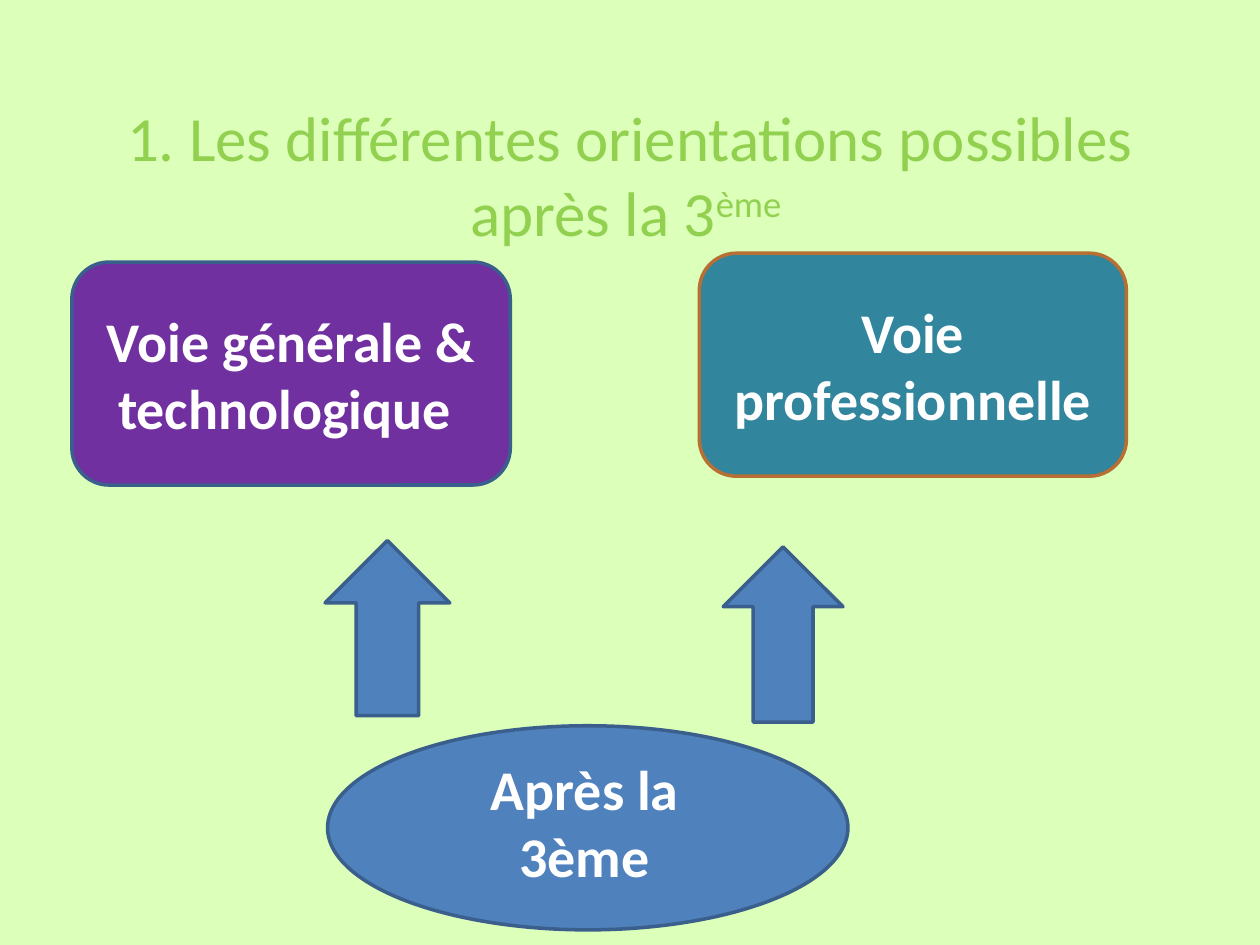
from pptx import Presentation
from pptx.dml.color import RGBColor
from pptx.enum.shapes import MSO_SHAPE
from pptx.enum.text import MSO_ANCHOR, PP_ALIGN
from pptx.util import Inches, Pt

ROUNDED = MSO_SHAPE.ROUNDED_RECTANGLE
UP_ARROW = MSO_SHAPE.UP_ARROW
OVAL = MSO_SHAPE.OVAL
CENTER = PP_ALIGN.CENTER
TOP, MIDDLE = MSO_ANCHOR.TOP, MSO_ANCHOR.MIDDLE

FONT = "Calibri"
BLUE, DARK_BLUE = "4F81BD", "3A5F8C"


def color(hex_value):
    return RGBColor.from_string(hex_value)


def add_run(paragraph, text, size, hex_value, bold=False):
    run = paragraph.add_run()
    run.text = text
    run.font.name = FONT
    run.font.size = Pt(size)
    run.font.bold = bold
    run.font.color.rgb = color(hex_value)
    return run


def set_frame(frame, anchor, left=0.1, top=0.05, right=0.1, bottom=0.05):
    frame.word_wrap = True
    frame.vertical_anchor = anchor
    frame.margin_left, frame.margin_right = Inches(left), Inches(right)
    frame.margin_top, frame.margin_bottom = Inches(top), Inches(bottom)
    paragraph = frame.paragraphs[0]
    paragraph.alignment = CENTER
    return paragraph


def add_title(slide, box):
    title = slide.shapes.add_textbox(*map(Inches, box))
    paragraph = set_frame(title.text_frame, TOP, top=0.45, bottom=0)
    add_run(paragraph, "1. Les différentes orientations possibles après la 3", 36, "92D050")
    ordinal = add_run(paragraph, "ème ", 36, "92D050")
    ordinal.font._element.set("baseline", "30000")


def add_block(slide, kind, box, fill=BLUE, outline=DARK_BLUE):
    block = slide.shapes.add_shape(kind, *map(Inches, box))
    block.shadow.inherit = False
    block.fill.solid()
    block.fill.fore_color.rgb = color(fill)
    block.line.color.rgb = color(outline)
    block.line.width = Pt(2)
    return block


def add_label(block, text, **margins):
    paragraph = set_frame(block.text_frame, MIDDLE, **margins)
    add_run(paragraph, text, 32, "FFFFFF", bold=True)


def add_pathway(slide, box, text, fill, outline, arrow_box):
    """A destination with the arrow that leads up to it."""
    add_label(add_block(slide, ROUNDED, box, fill, outline), text)
    add_block(slide, UP_ARROW, arrow_box)


def add_start(slide, box):
    start = add_block(slide, OVAL, box)
    add_label(start, "Après la 3ème", left=0.42, right=0.47, bottom=0.15)


def main():
    presentation = Presentation()
    presentation.slide_width, presentation.slide_height = Inches(10), Inches(7.5)
    slide = presentation.slides.add_slide(presentation.slide_layouts[6])
    slide.background.fill.solid()
    slide.background.fill.fore_color.rgb = color("DCFFB9")

    add_title(slide, (0.5, 0.33, 9, 1.55))

    # Two pathways above their common starting point
    add_pathway(slide, (0.57, 2.08, 3.48, 1.77), "Voie générale & technologique ",
                "7030A0", DARK_BLUE, (2.58, 4.29, 0.99, 1.39))
    add_pathway(slide, (5.55, 2.01, 3.39, 1.77), "Voie professionnelle",
                "31859C", "B76F34", (5.74, 4.34, 0.95, 1.39))
    add_start(slide, (2.6, 5.76, 4.13, 1.62))

    presentation.save("out.pptx")


if __name__ == "__main__":
    main()
